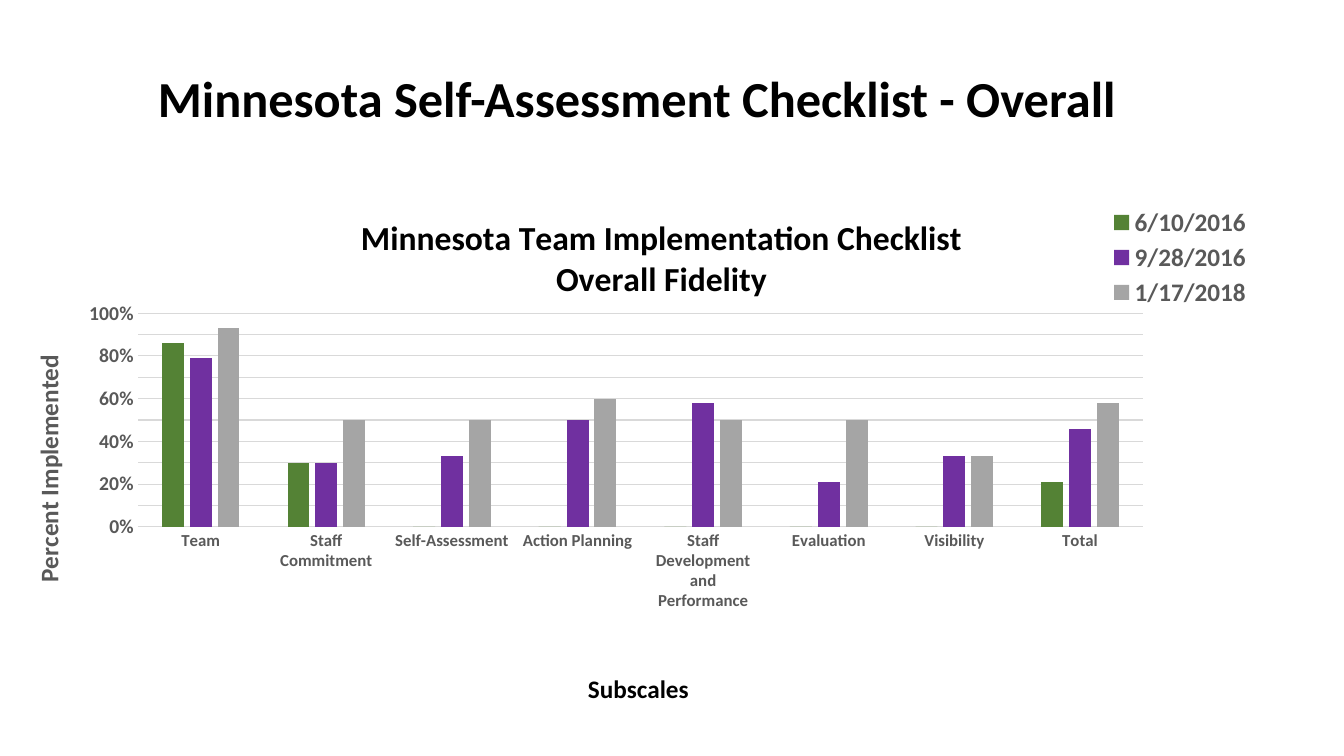
from lxml.etree import SubElement as Sub
from pptx import Presentation
from pptx.chart.data import CategoryChartData as Data
from pptx.dml.color import RGBColor as Rgb
from pptx.enum.chart import XL_CHART_TYPE as Kind, XL_LEGEND_POSITION as Side, XL_TICK_MARK as Tick
from pptx.enum.text import MSO_ANCHOR as Anchor, PP_ALIGN as Align
from pptx.oxml.ns import qn
from pptx.util import Inches, Pt

HEAD = "Minnesota Self-Assessment Checklist - Overall"
TITLE = "Minnesota Team Implementation Checklist\nOverall Fidelity"
CATS = ["Team", "Staff Commitment", "Self-Assessment", "Action Planning",
        "Staff Development and Performance", "Evaluation", "Visibility", "Total"]
ROWS = [
    ("6/10/2016", "green", (0.86, 0.3, 0, 0, 0, 0, 0, 0.21)),
    ("9/28/2016", "purple", (0.79, 0.3, 0.33, 0.5, 0.58, 0.21, 0.33, 0.46)),
    ("1/17/2018", "gray", (0.93, 0.5, 0.5, 0.6, 0.5, 0.5, 0.33, 0.58)),
]
HUES = {"black": "000000", "text": "595959", "grid": "D9D9D9",
        "green": "548235", "purple": "7030A0", "gray": "A5A5A5"}
BOXES = {"head": (0.2, 0.37, 12.24, 1.27), "chart": (0, 1.85, 13.15, 5.42)}
SPOTS = {
    "title": {"x": 0.27, "y": 0.05},
    "cat": {"x": 0.44, "y": 0.88},
    "val": {"x": 0.02, "y": 0.3},
    "legend": {"x": 0.83, "y": 0.03, "w": 0.12, "h": 0.2},
    "plot": {"x": 0.104, "y": 0.232, "w": 0.758, "h": 0.391},
}


def style(font, size, hue, bold=True):
    for key, val in {"name": "Calibri", "size": Pt(size), "bold": bold}.items():
        setattr(font, key, val)
    font.color.rgb = Rgb.from_string(HUES[hue])


def label(frame, text, size, hue):
    frame.text = text
    for para in frame.paragraphs:
        para.alignment = Align.CENTER
        for run in para.runs:
            style(run.font, size, hue)


def place(node, spot, prior=None):
    for old in node.findall(qn("c:layout")):
        node.remove(old)
    layout = Sub(node, qn("c:layout"))
    if prior:
        node.find(qn(prior)).addnext(layout)
    else:
        node.insert(0, layout)
    part = Sub(layout, qn("c:manualLayout"))
    if node.tag == qn("c:plotArea"):
        Sub(part, qn("c:layoutTarget"), val="inner")
    for key in ("x", "y"):
        Sub(part, qn(f"c:{key}Mode"), val="edge")
    for key, val in spot.items():
        Sub(part, qn(f"c:{key}"), val=str(val))


def edge(line, hue):
    line.color.rgb = Rgb.from_string(HUES[hue])
    line.width = Pt(0.75)


def add_head(slide):
    frame = slide.shapes.add_textbox(*map(Inches, BOXES["head"])).text_frame
    frame.word_wrap = True
    frame.vertical_anchor = Anchor.MIDDLE
    label(frame, HEAD, 36, "black")
    frame.paragraphs[0].line_spacing = 0.9


def add_bars(slide):
    data = Data(number_format="0%")
    data.categories = CATS
    for name, _, vals in ROWS:
        data.add_series(name, vals)
    box = map(Inches, BOXES["chart"])
    chart = slide.shapes.add_chart(Kind.COLUMN_CLUSTERED, *box, data).chart
    style(chart.font, 10, "black", False)

    plot = chart.plots[0]
    for key, val in {"gap_width": 219, "overlap": -27, "vary_by_categories": False}.items():
        setattr(plot, key, val)
    for bars, (_, hue, _) in zip(plot.series, ROWS):
        bars.invert_if_negative = False
        bars.format.fill.solid()
        bars.format.fill.fore_color.rgb = Rgb.from_string(HUES[hue])

    cat, val = chart.category_axis, chart.value_axis
    for axis, size in ((cat, 12), (val, 14)):
        axis.major_tick_mark = axis.minor_tick_mark = Tick.NONE
        style(axis.tick_labels.font, size, "text")
    edge(cat.format.line, "grid")
    val.format.line.fill.background()
    edge(val.major_gridlines.format.line, "grid")
    for key, num in {"minimum_scale": 0, "maximum_scale": 1, "major_unit": 0.1}.items():
        setattr(val, key, num)
    val.tick_labels.number_format = "0%"
    val.tick_labels.number_format_is_linked = False

    for owner, text, size, hue, spot in (
        (chart.chart_title, TITLE, 24, "black", "title"),
        (cat.axis_title, "Subscales", 18, "black", "cat"),
        (val.axis_title, "Percent Implemented", 18, "text", "val"),
    ):
        label(owner.text_frame, text, size, hue)
        place(owner.element, SPOTS[spot], "c:tx")
    body = next(val.axis_title.element.iter(qn("a:bodyPr")))
    body.set("rot", "-5400000")
    body.set("vert", "horz")

    chart.has_legend = True
    chart.legend.position = Side.RIGHT
    chart.legend.include_in_layout = False
    style(chart.legend.font, 18, "text")
    root = chart.element if hasattr(chart, "element") else chart._chartSpace
    place(next(root.iter(qn("c:legend"))), SPOTS["legend"], "c:legendPos")
    place(next(root.iter(qn("c:plotArea"))), SPOTS["plot"])


def main():
    deck = Presentation()
    deck.slide_width, deck.slide_height = Inches(13.33), Inches(7.5)
    slide = deck.slides.add_slide(deck.slide_layouts[6])
    add_head(slide)
    add_bars(slide)
    deck.save("out.pptx")


if __name__ == "__main__":
    main()
